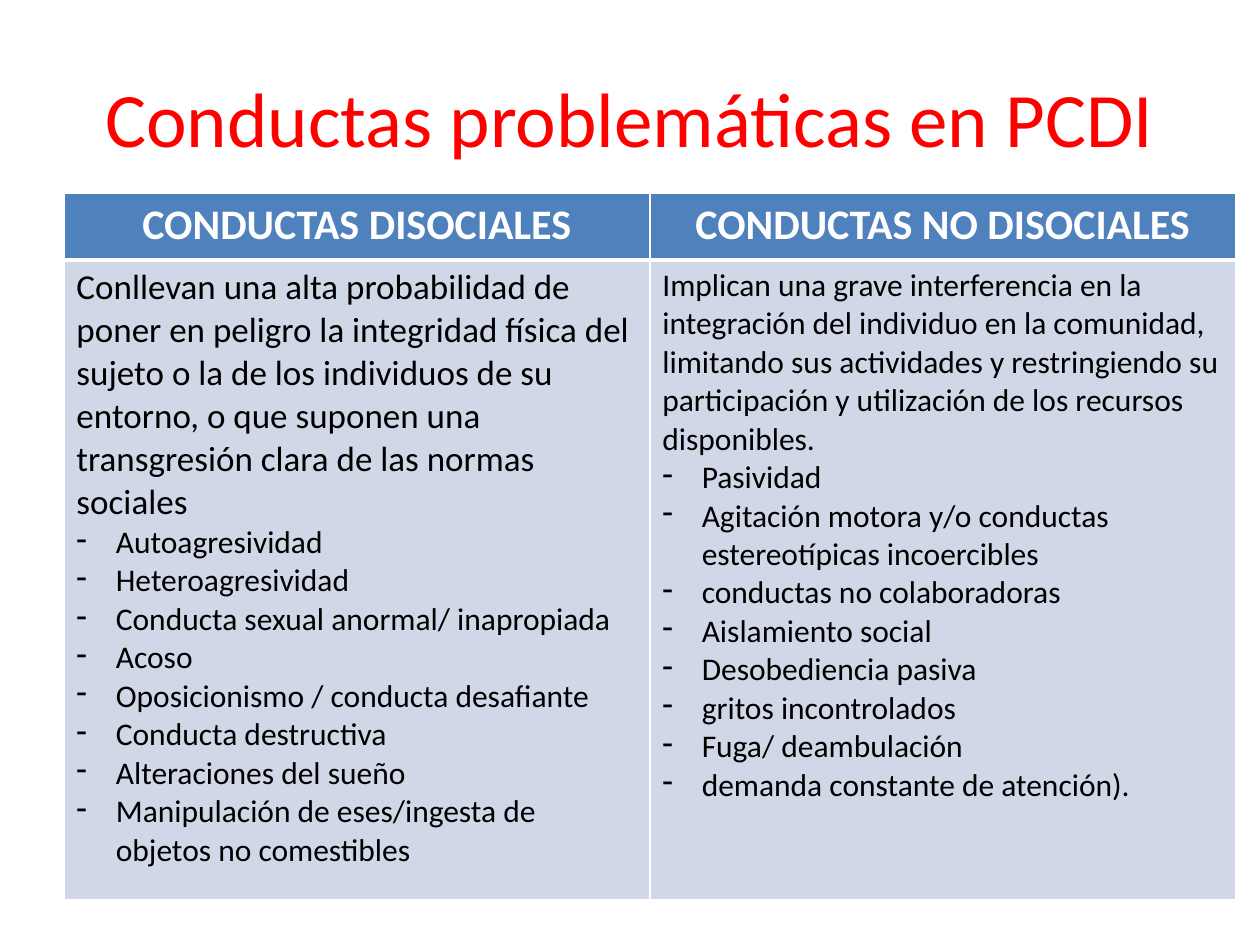
from dataclasses import dataclass

import pptx
import pptx.dml.color
import pptx.enum.text
import pptx.oxml
import pptx.oxml.ns
import pptx.util
from lxml import etree

Pt = pptx.util.Pt
ALIGN = pptx.enum.text.PP_ALIGN
ANCHOR = pptx.enum.text.MSO_ANCHOR
WHITE, BLACK, RED = "FFFFFF", "000000", "FF0000"
HEADER_FILL, BODY_FILL = "4F81BD", "D0D8E8"
COLUMN_WIDTH, HEADER_HEIGHT, BODY_HEIGHT = 334.8, 38.4, 365.6
INDENT = 22.5


@dataclass
class Category:
    heading: str
    definition: str
    definition_size: float
    behaviours: list[str]


CATEGORIES = [
    Category(
        "CONDUCTAS DISOCIALES",
        "Conllevan una alta probabilidad de poner en peligro la integridad física del sujeto "
        "o la de los individuos de su entorno, o que suponen una transgresión clara de las "
        "normas sociales",
        20,
        [
            "Autoagresividad",
            "Heteroagresividad",
            "Conducta sexual anormal/ inapropiada",
            "Acoso",
            "Oposicionismo / conducta desafiante",
            "Conducta destructiva",
            "Alteraciones del sueño",
            "Manipulación de eses/ingesta de objetos no comestibles",
        ],
    ),
    Category(
        "CONDUCTAS NO DISOCIALES",
        "Implican una grave interferencia en la integración del individuo en la comunidad, "
        "limitando sus actividades y restringiendo su participación y utilización de los "
        "recursos disponibles.",
        18,
        [
            "Pasividad",
            "Agitación motora y/o conductas estereotípicas incoercibles",
            "conductas no colaboradoras",
            "Aislamiento social",
            "Desobediencia pasiva",
            "gritos incontrolados",
            "Fuga/ deambulación",
            "demanda constante de atención).",
        ],
    ),
]


def color(value: str) -> pptx.dml.color.RGBColor:
    return pptx.dml.color.RGBColor.from_string(value)


def apply(target, values: dict) -> None:
    for name, value in values.items():
        setattr(target, name, value)


def write(para, text: str, size: float, ink: str, bold: bool = False) -> None:
    span = para.add_run()
    span.text = text
    apply(span.font, {"name": "Calibri", "size": Pt(size), "bold": bold})
    span.font.color.rgb = color(ink)


def add_dash(para) -> None:
    properties = para._p.get_or_add_pPr()
    apply_indent = {"marL": Pt(INDENT), "indent": -Pt(INDENT)}
    for name, value in apply_indent.items():
        properties.set(name, str(int(value)))
    etree.SubElement(properties, pptx.oxml.ns.qn("a:buFontTx"))
    etree.SubElement(properties, pptx.oxml.ns.qn("a:buChar")).set("char", "-")


def style_cell(cell, fill: str, borders: dict[str, float]) -> None:
    properties = cell._tc.get_or_add_tcPr()
    for side, width in borders.items():
        properties.append(pptx.oxml.parse_xml(
            f'<a:{side} {pptx.oxml.ns.nsdecls("a")} w="{int(Pt(width))}">'
            f'<a:solidFill><a:srgbClr val="{WHITE}"/></a:solidFill></a:{side}>'
        ))
    cell.fill.solid()
    cell.fill.fore_color.rgb = color(fill)


def fill_column(table, column: int, category: Category) -> None:
    header, body = table.cell(0, column), table.cell(1, column)
    style_cell(header, HEADER_FILL, {"lnL": 1, "lnR": 1, "lnT": 1, "lnB": 3})
    style_cell(body, BODY_FILL, {"lnL": 1, "lnR": 1, "lnT": 3, "lnB": 1})
    para = header.text_frame.paragraphs[0]
    para.alignment = ALIGN.CENTER
    write(para, category.heading, 24, WHITE, True)
    frame = body.text_frame
    write(frame.paragraphs[0], category.definition, category.definition_size, BLACK)
    for behaviour in category.behaviours:
        para = frame.add_paragraph()
        add_dash(para)
        write(para, behaviour, 18, BLACK)


def main() -> None:
    deck = pptx.Presentation()
    apply(deck, {"slide_width": Pt(720), "slide_height": Pt(540)})
    page = deck.slides.add_slide(deck.slide_layouts[5])

    title = page.shapes.title
    apply(title, {"left": Pt(36), "top": Pt(21.6), "width": Pt(648), "height": Pt(90)})
    title.text_frame.vertical_anchor = ANCHOR.MIDDLE
    para = title.text_frame.paragraphs[0]
    para.alignment = ALIGN.CENTER
    write(para, "Conductas problemáticas en PCDI", 44, RED)

    table = page.shapes.add_table(
        2, len(CATEGORIES), Pt(36.5), Pt(110.2),
        Pt(COLUMN_WIDTH * len(CATEGORIES)), Pt(HEADER_HEIGHT + BODY_HEIGHT),
    ).table
    for row, height in zip(table.rows, (HEADER_HEIGHT, BODY_HEIGHT)):
        row.height = Pt(height)
    for index, category in enumerate(CATEGORIES):
        table.columns[index].width = Pt(COLUMN_WIDTH)
        fill_column(table, index, category)

    deck.save("out.pptx")


if __name__ == "__main__":
    main()
